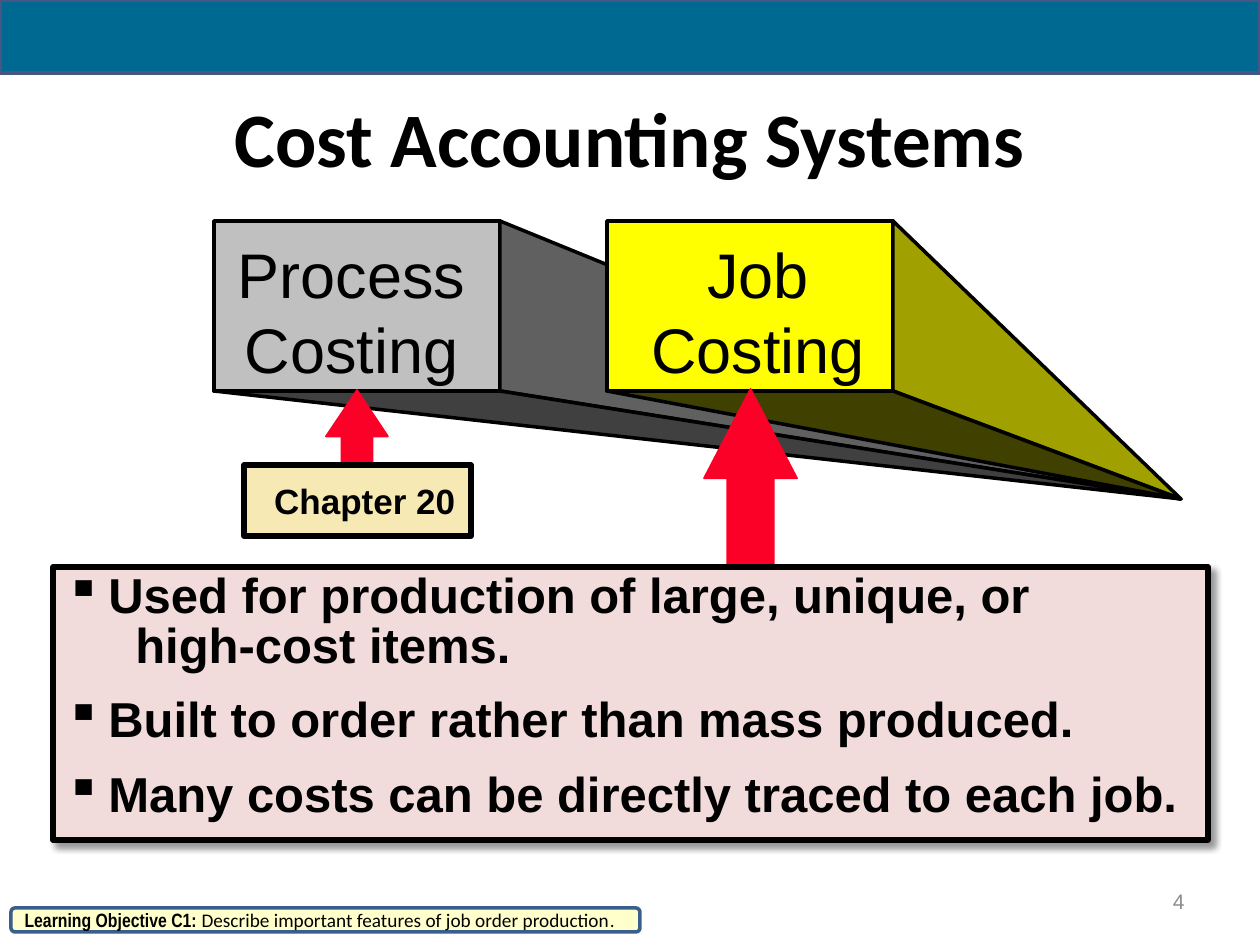
"""Build the Cost Accounting Systems slide."""
from dataclasses import dataclass

from lxml.etree import SubElement
from pptx import Presentation
from pptx.dml.color import RGBColor as Rgb
from pptx.enum.shapes import MSO_SHAPE as Kind
from pptx.enum.text import MSO_ANCHOR as Anchor, PP_ALIGN as Align
from pptx.oxml.ns import qn
from pptx.util import Emu, Pt


@dataclass(frozen=True)
class Theme:
    ink: str = "000000"
    bar: str = "006991"
    bar_edge: str = "475785"
    red: str = "FC0128"
    cream: str = "F6E9B4"
    pink: str = "F2DCDB"
    pale: str = "FFFFCC"
    foot_edge: str = "3A5F8C"
    dim: str = "8C8C8C"
    title: int = 44
    block: int = 36
    body: int = 28
    label: int = 20
    number: int = 12
    foot: int = 11


T = Theme()
SCALE = 914400 / 126
TIP = (1181, 499)
TOP, WIDTH, HEIGHT = 221, 286, 170
BLOCKS = [
    ("Process\vCosting", 214, "C0C0C0", "606060", "404040", (209, 285)),
    ("Job\vCosting", 607, "FFFF00", "A0A000", "404000", (600, 316)),
]
ARROWS = [((704, 389, 93, 178), 0.96), ((326, 390, 62, 93), 0.75)]
POINTS = [
    ("Used for production of large, unique, or", True),
    ("high-cost items.", False),
    ("Built to order rather than mass produced.", True),
    ("Many costs can be directly traced to each job.", True),
]
GOAL = [
    ("Learning Objective C1: ", "Arial Narrow", True),
    ("Describe important features of job order production", "Calibri", False),
    (".", "Arial", False),
]


def px(n):
    return Emu(round(n * SCALE))


def paint(shape, fill, edge, width):
    shape.shadow.inherit = False
    shape.fill.solid()
    shape.fill.fore_color.rgb = Rgb.from_string(fill)
    shape.line.color.rgb = Rgb.from_string(edge)
    shape.line.width = Pt(width)
    return shape


def draw(kind, at, fill, edge=T.ink, width=2):
    return paint(slide.shapes.add_shape(kind, *map(px, at)), fill, edge, width)


def face(spots, fill):
    pen = slide.shapes.build_freeform(*spots[0], scale=SCALE)
    pen.add_line_segments(spots[1:], close=True)
    paint(pen.convert_to_shape(), fill, T.ink, 2)


def style(font, size, name="Arial", bold=False, color=T.ink):
    font.size, font.name, font.bold = Pt(size), name, bold
    font.color.rgb = Rgb.from_string(color)


def setup(shape, anchor=Anchor.MIDDLE):
    frame = shape.text_frame
    frame.word_wrap, frame.vertical_anchor = True, anchor
    return frame


def write(shape, text, size, align=Align.CENTER, **look):
    para = setup(shape).paragraphs[0]
    para.text, para.alignment = text, align
    style(para.font, size, **look)


def label(at, text, size, **look):
    write(slide.shapes.add_textbox(*map(px, at)), text, size, **look)


def block(text, left, front, side, under, span):
    right, base = left + WIDTH, TOP + HEIGHT
    draw(Kind.RECTANGLE, (left, TOP, WIDTH, HEIGHT), front)
    face([(right, TOP), TIP, (right, base)], side)
    face([(left, base), (right, base), TIP], under)
    return (span[0], 229, span[1], 164), text


def cast(shape):
    glow = SubElement(shape.element.spPr.find(qn("a:effectLst")), qn("a:outerShdw"),
                      blurRad=str(Pt(4)), dist=str(Pt(3)), dir="2700000", algn="tl")
    tint = SubElement(glow, qn("a:srgbClr"), val=T.ink)
    SubElement(tint, qn("a:alpha"), val="40000")


def bullets(shape):
    frame = setup(shape, Anchor.TOP)
    for i, (text, marked) in enumerate(POINTS):
        para = frame.paragraphs[0] if i == 0 else frame.add_paragraph()
        para.text, para.alignment, para.line_spacing = text, Align.LEFT, 0.85
        para.space_before = Pt(14 if i and marked else 0)
        style(para.font, T.body, bold=True)
        props = para._p.get_or_add_pPr()
        props.set("marL", str(px(43 if marked else 70)))
        props.set("indent", str(px(-43 if marked else 0)))
        mark = SubElement(props, qn("a:buChar" if marked else "a:buNone"))
        if marked:
            mark.set("char", "▪")
        props.append(props.find(qn("a:defRPr")))


def footer(shape):
    para = setup(shape).paragraphs[0]
    para.alignment = Align.LEFT
    for text, name, bold in GOAL:
        run = para.add_run()
        run.text = text
        style(run.font, T.foot, name, bold)


deck = Presentation()
deck.slide_width, deck.slide_height = px(1260), px(945)
slide = deck.slides.add_slide(deck.slide_layouts[6])

for at, text in [block(*item) for item in BLOCKS]:
    label(at, text, T.block)
for at, head in ARROWS:
    arrow = draw(Kind.UP_ARROW, at, T.red, T.red, 1)
    arrow.adjustments[0], arrow.adjustments[1] = 0.5, head

panel = draw(Kind.RECTANGLE, (53, 567, 1155, 273), T.pink, width=3)
cast(panel)
bullets(panel)
label((63, 84, 1134, 105), "Cost Accounting Systems", T.title, name="Calibri", bold=True)
chapter = draw(Kind.RECTANGLE, (244, 465, 227, 71), T.cream, width=3)
write(chapter, "Chapter 20", T.label, bold=True)
chapter.text_frame.margin_left = px(27)
draw(Kind.RECTANGLE, (0, 0, 1260, 73), T.bar, T.bar_edge, 2.25)
label((903, 876, 294, 50), "4", T.number, align=Align.RIGHT, color=T.dim)
footer(draw(Kind.ROUNDED_RECTANGLE, (11, 908, 629, 24), T.pale, T.foot_edge))

deck.save("out.pptx")
